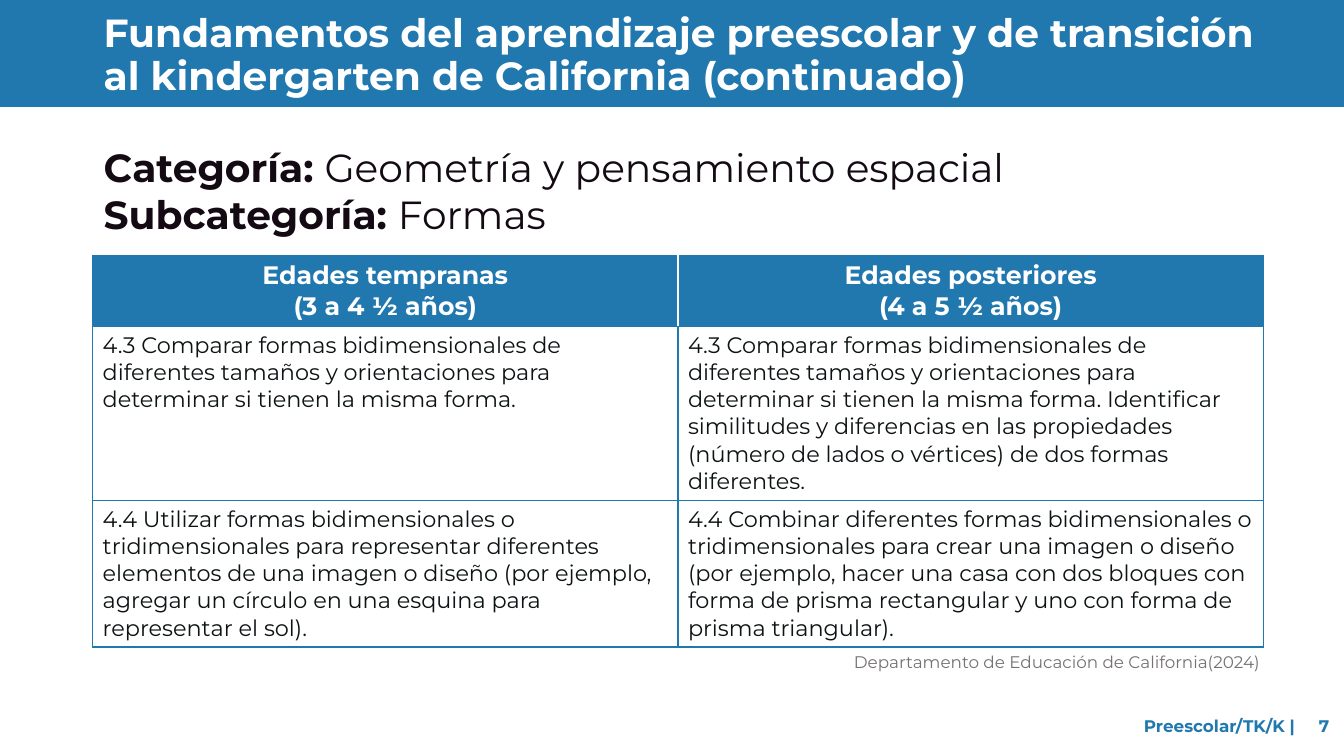
"""Build the slide on preschool geometry foundations as out.pptx."""
from dataclasses import dataclass

from lxml import etree
from pptx import Presentation
from pptx import util as u
from pptx.dml.color import RGBColor
from pptx.enum import shapes, text
from pptx.oxml.ns import qn

COLORS = {"blue": "2078AE", "white": "FFFFFF", "plum": "140A14",
          "ink": "0D1314", "gray": "767171"}
FONT = "Montserrat"
LEFT, RIGHT, CENTER = (text.PP_ALIGN.LEFT, text.PP_ALIGN.RIGHT,
                       text.PP_ALIGN.CENTER)


@dataclass(frozen=True)
class Style:
    size: float
    color: str
    align: text.PP_ALIGN = LEFT
    spacing: float = 1.0


@dataclass(frozen=True)
class Run:
    words: str
    bold: bool = False


@dataclass(frozen=True)
class Block:
    left: float
    top: float
    width: float
    height: float
    style: Style
    paragraphs: list[list[Run]]
    anchor: text.MSO_ANCHOR = text.MSO_ANCHOR.TOP
    tab: float = 0


HEADING = Style(18, "white", CENTER)
STANDARD = Style(16, "ink")

BLOCKS = [
    Block(810, 504, 147.6, 28.8, Style(12, "blue"),
          [[Run("Preescolar/TK/K |\t7", True)]],
          text.MSO_ANCHOR.MIDDLE, tab=125),
    Block(67, 6.5, 853.2, 68.4, Style(28, "white", spacing=0.9),
          [[Run("Fundamentos del aprendizaje preescolar y de transición "
                "al kindergarten de California (continuado)", True)]]),
    Block(67, 98.6, 853.2, 80, Style(28, "plum"),
          [[Run("Categoría: ", True), Run("Geometría y pensamiento espacial")],
           [Run("Subcategoría: ", True), Run("Formas")]]),
    Block(60.5, 462.2, 846.7, 21.6, Style(12, "gray", RIGHT),
          [[Run("Departamento de Educación de California(2024)")]]),
]

AGES = [["Edades tempranas", "(3 a 4 ½ años)"],
        ["Edades posteriores", "(4 a 5 ½ años)"]]
STANDARDS = [
    ["4.3 Comparar formas bidimensionales de diferentes tamaños y "
     "orientaciones para determinar si tienen la misma forma.",
     "4.3 Comparar formas bidimensionales de diferentes tamaños y "
     "orientaciones para determinar si tienen la misma forma. Identificar "
     "similitudes y diferencias en las propiedades (número de lados o "
     "vértices) de dos formas diferentes."],
    ["4.4 Utilizar formas bidimensionales o tridimensionales para "
     "representar diferentes elementos de una imagen o diseño (por ejemplo, "
     "agregar un círculo en una esquina para representar el sol).",
     "4.4 Combinar diferentes formas bidimensionales o tridimensionales para "
     "crear una imagen o diseño (por ejemplo, hacer una casa con dos bloques "
     "con forma de prisma rectangular y uno con forma de prisma triangular)."],
]
COLUMN_WIDTH = 418.1
ROW_HEIGHTS = [51.1, 124.2, 104.7]


def rgb(name: str) -> RGBColor:
    return RGBColor.from_string(COLORS[name])


def write(frame, paragraphs: list[list[Run]], style: Style,
          tab: float = 0) -> None:
    for index, runs in enumerate(paragraphs):
        paragraph = frame.add_paragraph() if index else frame.paragraphs[0]
        paragraph.alignment = style.align
        paragraph.line_spacing = style.spacing
        if tab:
            stops = etree.SubElement(paragraph._p.get_or_add_pPr(),
                                     qn("a:tabLst"))
            etree.SubElement(stops, qn("a:tab"), pos=str(u.Pt(tab)), algn="l")
        for part in runs:
            run = paragraph.add_run()
            run.text = part.words
            run.font.name = FONT
            run.font.size = u.Pt(style.size)
            run.font.bold = part.bold
            run.font.color.rgb = rgb(style.color)


def draw_banner(slide) -> None:
    banner = slide.shapes.add_shape(shapes.MSO_SHAPE.RECTANGLE, 0, 0,
                                    u.Pt(960), u.Pt(76.3))
    banner.shadow.inherit = False
    banner.fill.solid()
    banner.fill.fore_color.rgb = rgb("blue")
    banner.line.fill.background()


def draw_block(slide, block: Block) -> None:
    box = slide.shapes.add_textbox(u.Pt(block.left), u.Pt(block.top),
                                   u.Pt(block.width), u.Pt(block.height))
    box.text_frame.word_wrap = True
    box.text_frame.vertical_anchor = block.anchor
    write(box.text_frame, block.paragraphs, block.style, block.tab)


def set_borders(cell, sides: dict[str, str]) -> None:
    properties = cell._tc.get_or_add_tcPr()
    for index, (side, color) in enumerate(sides.items()):
        line = etree.Element(qn(f"a:ln{side}"), w=str(u.Pt(1)))
        fill = etree.SubElement(line, qn("a:solidFill"))
        etree.SubElement(fill, qn("a:srgbClr"), val=COLORS[color])
        properties.insert(index, line)


def draw_standards(slide) -> None:
    table = slide.shapes.add_table(
        len(ROW_HEIGHTS), len(AGES), u.Pt(66.2), u.Pt(182.2),
        u.Pt(COLUMN_WIDTH * len(AGES)), u.Pt(sum(ROW_HEIGHTS))).table
    for column in table.columns:
        column.width = u.Pt(COLUMN_WIDTH)
    for row, height in zip(table.rows, ROW_HEIGHTS):
        row.height = u.Pt(height)
    rows = [AGES] + [[[entry] for entry in pair] for pair in STANDARDS]
    for r, entries in enumerate(rows):
        for c, lines in enumerate(entries):
            heading = r == 0
            cell = table.cell(r, c)
            cell.fill.solid()
            cell.fill.fore_color.rgb = rgb("blue" if heading else "white")
            sides = dict.fromkeys("LRTB", "blue")
            if heading:
                sides["L" if c else "R"] = "white"
            set_borders(cell, sides)
            write(cell.text_frame, [[Run(line, heading)] for line in lines],
                  HEADING if heading else STANDARD)


def main() -> None:
    deck = Presentation()
    deck.slide_width, deck.slide_height = u.Pt(960), u.Pt(540)
    slide = deck.slides.add_slide(deck.slide_layouts[6])
    draw_banner(slide)
    for block in BLOCKS:
        draw_block(slide, block)
    draw_standards(slide)
    deck.save("out.pptx")


if __name__ == "__main__":
    main()
